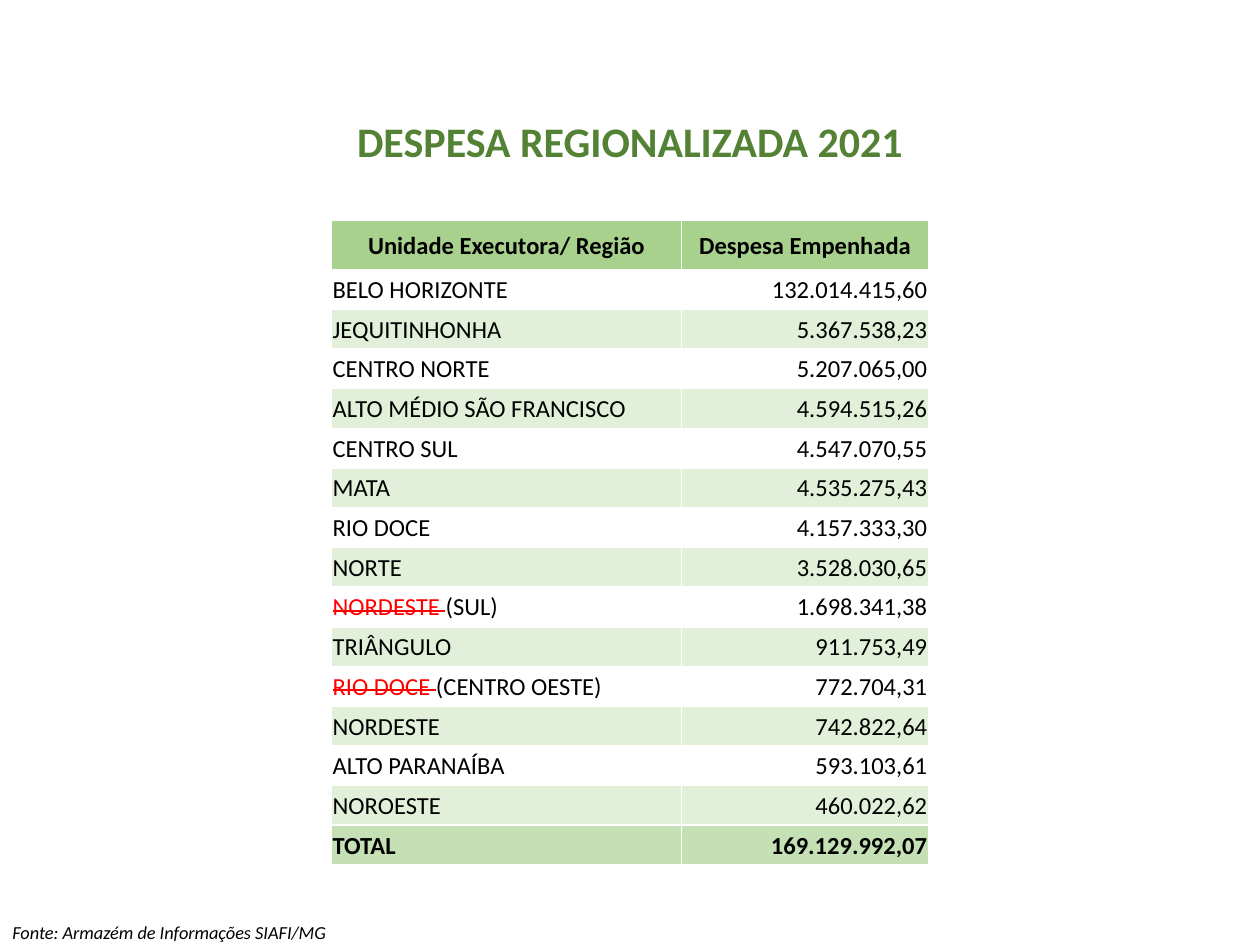
import pptx
import pptx.util
import pptx.dml.color
import pptx.enum.text
import pptx.oxml

Inches, Pt = pptx.util.Inches, pptx.util.Pt
ALIGN = pptx.enum.text.PP_ALIGN
MIDDLE = pptx.enum.text.MSO_ANCHOR.MIDDLE
NS = "http://schemas.openxmlformats.org/drawingml/2006/main"
COLORS = {"head": "A9D18E", "plain": "FFFFFF", "band": "E2F0D9", "total": "C5E0B4",
          "title": "548235", "text": "000000", "struck": "FF0000"}

# A bar parts the struck name from the one that takes its place.
ROWS = [
    ("Unidade Executora/ Região", "Despesa Empenhada"),
    ("BELO HORIZONTE", "132.014.415,60"),
    ("JEQUITINHONHA", "5.367.538,23"),
    ("CENTRO NORTE", "5.207.065,00"),
    ("ALTO MÉDIO SÃO FRANCISCO", "4.594.515,26"),
    ("CENTRO SUL", "4.547.070,55"),
    ("MATA", "4.535.275,43"),
    ("RIO DOCE", "4.157.333,30"),
    ("NORTE", "3.528.030,65"),
    ("NORDESTE |(SUL)", "1.698.341,38"),
    ("TRIÂNGULO", "911.753,49"),
    ("RIO DOCE |(CENTRO OESTE)", "772.704,31"),
    ("NORDESTE", "742.822,64"),
    ("ALTO PARANAÍBA", "593.103,61"),
    ("NOROESTE", "460.022,62"),
    ("TOTAL", "169.129.992,07"),
]


def rgb(name):
    return pptx.dml.color.RGBColor.from_string(COLORS[name])


def style(para, size, align, color="text", bold=False, italic=False):
    para.alignment = align
    font = para.font
    font.name, font.size = "Calibri", Pt(size)
    font.bold, font.italic = bold, italic
    font.color.rgb = rgb(color)


deck = pptx.Presentation()
deck.slide_width, deck.slide_height = Inches(10), Inches(7.5)
slide = deck.slides.add_slide(deck.slide_layouts[6])

# Table
widths = (2.78, 1.96)
high, head = 5.12, 0.39
step = (high - head) / (len(ROWS) - 1)
frame = slide.shapes.add_table(len(ROWS), len(widths), Inches(2.63), Inches(1.75),
                               Inches(sum(widths)), Inches(high))
table = frame.table
table.first_row = table.horz_banding = False
for col, width in zip(table.columns, widths):
    col.width = Inches(width)

for r, row in enumerate(ROWS):
    table.rows[r].height = Inches(step if r else head)
    last = r == len(ROWS) - 1
    fill = "head" if r == 0 else "total" if last else "plain" if r % 2 else "band"
    for c, text in enumerate(row):
        cell = table.cell(r, c)
        cell.vertical_anchor = MIDDLE
        cell.margin_left = cell.margin_right = cell.margin_top = Inches(0.01)
        cell.margin_bottom = 0
        props = cell._tc.get_or_add_tcPr()
        for side in "LRTB":
            props.append(pptx.oxml.parse_xml(
                f'<a:ln{side} xmlns:a="{NS}" w="{Pt(1)}"><a:solidFill>'
                f'<a:srgbClr val="{COLORS["plain"]}"/></a:solidFill></a:ln{side}>'))
        cell.fill.solid()
        cell.fill.fore_color.rgb = rgb(fill)

        para = cell.text_frame.paragraphs[0]
        align = ALIGN.CENTER if r == 0 else (ALIGN.LEFT, ALIGN.RIGHT)[c]
        style(para, 14, align, bold=r == 0 or last)
        old, bar, new = text.rpartition("|")
        if bar:
            run = para.add_run()
            run.text = old
            run.font.color.rgb = rgb("struck")
            run._r.get_or_add_rPr().set("strike", "sngStrike")
        para.add_run().text = new

# Title and source line
for text, area, look in (
    ("DESPESA REGIONALIZADA 2021", (0.5, 0.72, 9, 0.79),
     dict(size=24, align=ALIGN.CENTER, color="title", bold=True)),
    ("Fonte: Armazém de Informações SIAFI/MG", (0, 7.3, 7.95, 0.2),
     dict(size=10.5, align=ALIGN.LEFT, italic=True)),
):
    box = slide.shapes.add_textbox(*map(Inches, area)).text_frame
    box.word_wrap = True
    box.vertical_anchor = MIDDLE
    box.text = text
    style(box.paragraphs[0], **look)

deck.save("out.pptx")
